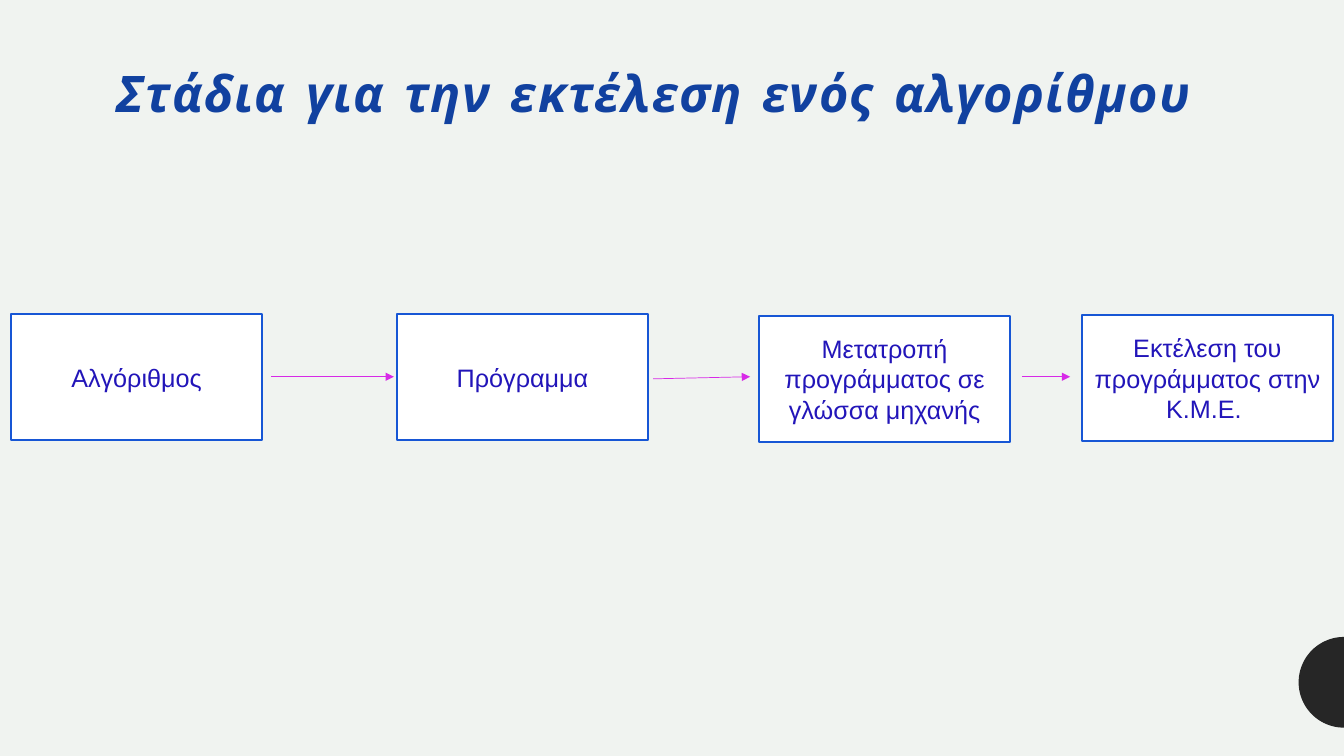
from math import cos, pi, sin

from lxml import etree
from pptx import Presentation
from pptx.dml.color import RGBColor
from pptx.enum.shapes import MSO_CONNECTOR, MSO_SHAPE
from pptx.enum.text import MSO_ANCHOR, MSO_AUTO_SIZE, PP_ALIGN
from pptx.oxml.ns import qn
from pptx.util import Pt

PROCESS = MSO_SHAPE.FLOWCHART_PROCESS
STRAIGHT = MSO_CONNECTOR.STRAIGHT
TOP, MIDDLE = MSO_ANCHOR.TOP, MSO_ANCHOR.MIDDLE
LEFT, CENTER = PP_ALIGN.LEFT, PP_ALIGN.CENTER
NO_FIT = MSO_AUTO_SIZE.NONE

SLIDE_WIDTH, SLIDE_HEIGHT = 960, 540
STAGE_WIDTH, STAGE_HEIGHT = 179.3, 90

# Stage text, left, top
STAGES = [
    ("Αλγόριθμος", 7.9, 224.4),
    ("Πρόγραμμα", 283.6, 224.4),
    ("Μετατροπή προγράμματος σε γλώσσα μηχανής", 542.2, 225.6),
    ("Εκτέλεση του προγράμματος στην Κ.Μ.Ε. ", 772.8, 225),
]
# Start x, start y, end x, end y
ARROWS = [
    (193.6, 269.1, 281.4, 269.1),
    (466.6, 270.6, 535.8, 269.1),
    (730, 269.1, 764.4, 269.1),
]


def color(hex_value):
    return RGBColor.from_string(hex_value)


def add_text(para, text, font_name, size, hex_value):
    span = para.add_run()
    span.text = text
    span.font.name = font_name
    span.font.size = Pt(size)
    span.font.color.rgb = color(hex_value)
    return span


def set_title(page, text):
    title = page.shapes.title
    title.left, title.top, title.width, title.height = Pt(76.3), Pt(45.4), Pt(808), Pt(67)
    frame = title.text_frame
    frame.word_wrap = True
    frame.auto_size = NO_FIT
    frame.vertical_anchor = TOP
    para = frame.paragraphs[0]
    para.alignment = LEFT
    para.line_spacing = 0.9
    para.space_before = Pt(0)
    span = add_text(para, text, "Comic Neue", 36, "1141A0")
    span.font.bold = True
    span.font.italic = True
    span.font._element.set("spc", "100")


def add_half_disc(page, center_y, radius, steps=48):
    # Left half of a disc centred on the right edge of the page
    angles = [pi / 2 + pi * step / steps for step in range(steps + 1)]
    points = [
        (Pt(SLIDE_WIDTH + radius * cos(angle)), Pt(center_y + radius * sin(angle)))
        for angle in angles
    ]
    builder = page.shapes.build_freeform(*points[0])
    builder.add_line_segments(points[1:], close=True)
    disc = builder.convert_to_shape()
    disc.shadow.inherit = False
    disc.fill.solid()
    disc.fill.fore_color.rgb = color("262626")
    disc.line.fill.background()


def add_stage(page, text, left, top):
    box = page.shapes.add_shape(
        PROCESS, Pt(left), Pt(top), Pt(STAGE_WIDTH), Pt(STAGE_HEIGHT)
    )
    box.shadow.inherit = False
    box.fill.solid()
    box.fill.fore_color.rgb = color("FFFFFF")
    box.line.color.rgb = color("1756D5")
    box.line.width = Pt(1)
    frame = box.text_frame
    frame.word_wrap = True
    frame.vertical_anchor = MIDDLE
    para = frame.paragraphs[0]
    para.alignment = CENTER
    add_text(para, text, "Arial", 18, "2215B9")


def add_arrow(page, start_x, start_y, end_x, end_y):
    arrow = page.shapes.add_connector(
        STRAIGHT, Pt(start_x), Pt(start_y), Pt(end_x), Pt(end_y)
    )
    arrow.line.color.rgb = color("D729E7")
    arrow.line.width = Pt(0.5)
    # Arrowhead at the end, no shadow
    line = arrow.line._get_or_add_ln()
    etree.SubElement(line, qn("a:tailEnd"), type="triangle")
    etree.SubElement(arrow._element.spPr, qn("a:effectLst"))


def main():
    deck = Presentation()
    deck.slide_width, deck.slide_height = Pt(SLIDE_WIDTH), Pt(SLIDE_HEIGHT)
    page = deck.slides.add_slide(deck.slide_layouts[5])

    # Background and title
    page.background.fill.solid()
    page.background.fill.fore_color.rgb = color("F0F3F0")
    add_half_disc(page, 487.4, 32.4)
    set_title(page, "Στάδια για την εκτέλεση ενός αλγορίθμου")

    # Flow of stages
    for stage in STAGES:
        add_stage(page, *stage)
    for arrow in ARROWS:
        add_arrow(page, *arrow)

    deck.save("out.pptx")


if __name__ == "__main__":
    main()
